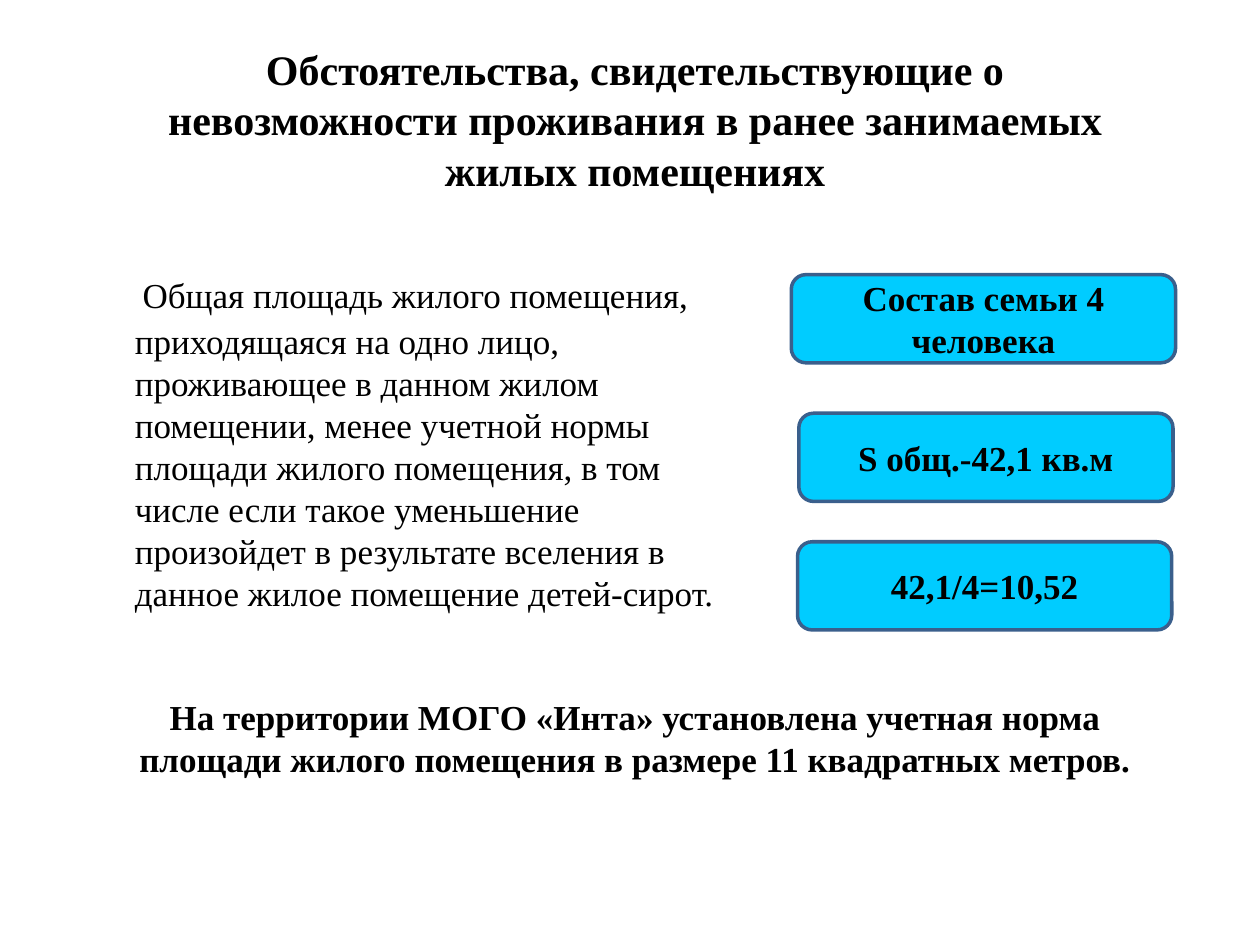
from dataclasses import dataclass
from pptx import Presentation
from pptx.dml.color import RGBColor as RGB
from pptx.enum.shapes import MSO_SHAPE as Shape
from pptx.enum.text import MSO_ANCHOR as Anchor, MSO_AUTO_SIZE as Fit, PP_ALIGN as Align
from pptx.oxml.xmlchemy import OxmlElement
from pptx.util import Inches, Pt


@dataclass
class Theme:
    font: str = "Times New Roman"
    ink: RGB = RGB(0, 0, 0)
    fill: RGB = RGB(0x00, 0xCC, 0xFF)
    edge: RGB = RGB(0x3A, 0x5F, 0x8C)
    head: Pt = Pt(24)
    body: Pt = Pt(20)
    lead: Pt = Pt(32)


theme = Theme()


def place(shape, left, top, width, height):
    shape.left, shape.top = Inches(left), Inches(top)
    shape.width, shape.height = Inches(width), Inches(height)


def write(shape, text, size, bold=True, align=Align.CENTER):
    frame = shape.text_frame
    frame.word_wrap = True
    frame.auto_size = Fit.NONE
    para = frame.paragraphs[0]
    para.add_run().text = text
    para.alignment = align
    font = para.font
    font.name, font.size, font.bold = theme.font, size, bold
    font.color.rgb = theme.ink
    return para


prs = Presentation()
prs.slide_width, prs.slide_height = Inches(10), Inches(7.5)
slide = prs.slides.add_slide(prs.slide_layouts[1])

# Title
title = slide.shapes.title
place(title, 0.94, 0.36, 8.2, 1.17)
write(title, "Обстоятельства, свидетельствующие о невозможности проживания "
      "в ранее занимаемых жилых помещениях", theme.head)
title.text_frame.vertical_anchor = Anchor.MIDDLE

# Rule text: a large leading space makes the first line taller
rule = slide.placeholders[1]
place(rule, 0.59, 1.95, 5.28, 3.21)
para = write(rule, " ", theme.body, False, Align.LEFT)
para.runs[0].font.size = theme.lead
para.add_run().text = (
    "Общая площадь жилого помещения, приходящаяся на одно лицо, "
    "проживающее в данном жилом помещении, менее учетной нормы площади "
    "жилого помещения, в том числе если такое уменьшение произойдет в "
    "результате вселения в данное жилое помещение детей-сирот.")
para.space_before = Pt(4)
props = para._p.get_or_add_pPr()
props.set("marL", str(Inches(0.38)))
props.set("indent", str(Inches(-0.05)))
props.insert_element_before(OxmlElement("a:buNone"), "a:tabLst", "a:defRPr", "a:extLst")

# Local norm
norm = slide.shapes.add_textbox(Inches(0.78), Inches(5.47), Inches(8.52), Inches(0.77))
write(norm, "На территории МОГО «Инта» установлена учетная норма площади "
      "жилого помещения в размере 11 квадратных метров.", theme.body)

# Worked example
steps = [
    ("Состав семьи 4 человека", 6.28, 2.18, 3.05),
    ("S общ.-42,1 кв.м", 6.34, 3.28, 2.97),
    ("42,1/4=10,52", 6.33, 4.3, 2.97),
]
for text, left, top, width in steps:
    box = slide.shapes.add_shape(Shape.ROUNDED_RECTANGLE, Inches(left), Inches(top),
                                 Inches(width), Inches(0.7))
    box.shadow.inherit = False
    box.fill.solid()
    box.fill.fore_color.rgb = theme.fill
    box.line.color.rgb = theme.edge
    box.line.width = Pt(2)
    write(box, text, theme.body)
    box.text_frame.vertical_anchor = Anchor.MIDDLE

prs.save("out.pptx")
